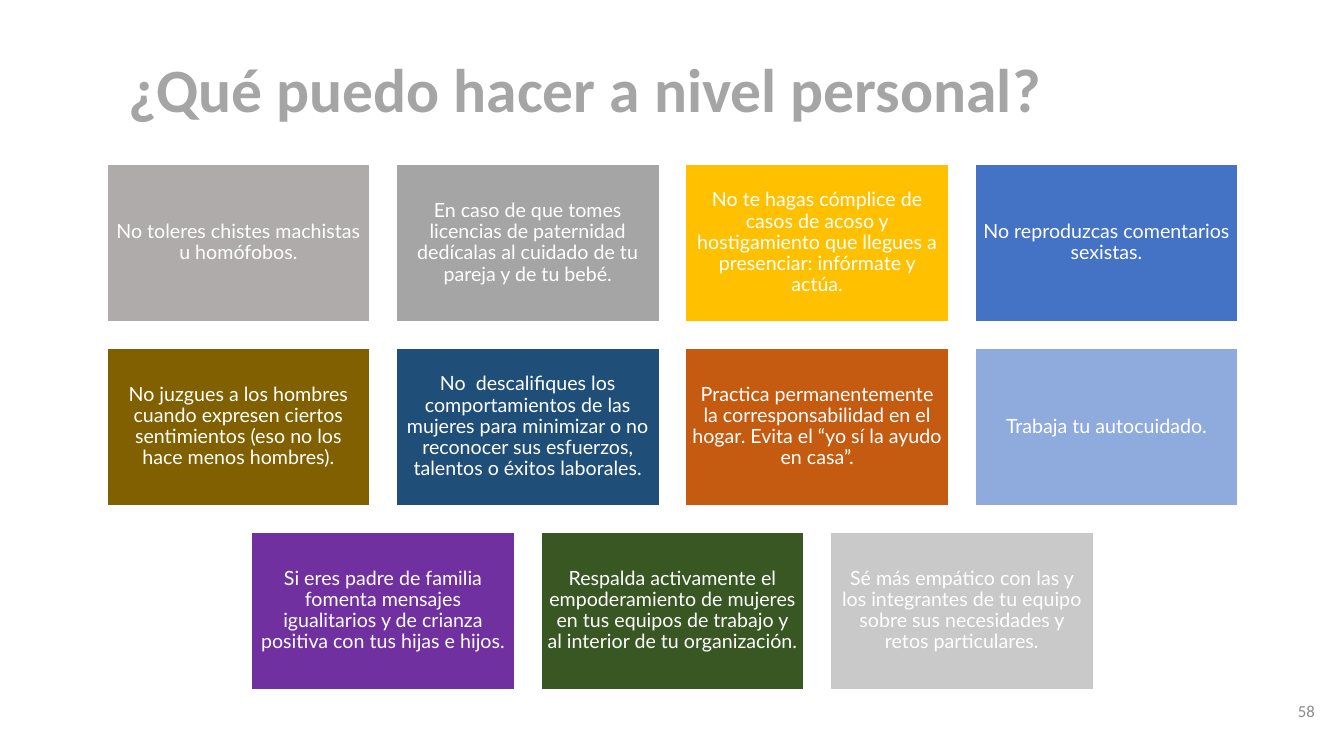
"""Build the slide of personal actions for gender equality."""
from dataclasses import dataclass

import pptx
import pptx.dml.color
import pptx.enum.shapes
import pptx.enum.text
import pptx.util

Inches = pptx.util.Inches
RGBColor = pptx.dml.color.RGBColor
PP_ALIGN = pptx.enum.text.PP_ALIGN
MSO_ANCHOR = pptx.enum.text.MSO_ANCHOR

WHITE = RGBColor(0xFF, 0xFF, 0xFF)
WARM_GRAY = RGBColor(0xAF, 0xAB, 0xAB)
GRAY = RGBColor(0xA5, 0xA5, 0xA5)
LIGHT_GRAY = RGBColor(0xC9, 0xC9, 0xC9)
NUMBER_GRAY = RGBColor(0x8C, 0x8C, 0x8C)
GOLD = RGBColor(0xFF, 0xC0, 0x00)
BLUE = RGBColor(0x44, 0x72, 0xC4)
BROWN = RGBColor(0x80, 0x60, 0x00)
NAVY = RGBColor(0x1F, 0x4E, 0x79)
ORANGE = RGBColor(0xC5, 0x5A, 0x11)
LIGHT_BLUE = RGBColor(0x8F, 0xAA, 0xDC)
PURPLE = RGBColor(0x70, 0x30, 0xA0)
GREEN = RGBColor(0x38, 0x57, 0x23)

SLIDE_W, SLIDE_H = 13.33, 7.5
CARD_W, CARD_H = 2.61, 1.56
STEP_X, STEP_Y = 2.87, 1.825
GRID_CENTER, GRID_TOP = 6.67, 1.63


@dataclass(frozen=True)
class Card:
    """One coloured piece of advice."""
    text: str
    fill: RGBColor


ROWS: list[list[Card]] = [
    [
        Card("No toleres chistes machistas u homófobos.", WARM_GRAY),
        Card("En caso de que tomes licencias de paternidad dedícalas al cuidado "
             "de tu pareja y de tu bebé.", GRAY),
        Card("No te hagas cómplice de casos de acoso y hostigamiento que llegues "
             "a presenciar: infórmate y actúa.", GOLD),
        Card("No reproduzcas comentarios sexistas.", BLUE),
    ],
    [
        Card("No juzgues a los hombres cuando expresen ciertos sentimientos "
             "(eso no los hace menos hombres).", BROWN),
        Card("No  descalifiques los comportamientos de las mujeres para minimizar "
             "o no reconocer sus esfuerzos, talentos o éxitos laborales.", NAVY),
        Card("Practica permanentemente la corresponsabilidad en el hogar. "
             "Evita el “yo sí la ayudo en casa”.", ORANGE),
        Card("Trabaja tu autocuidado.", LIGHT_BLUE),
    ],
    [
        Card("Si eres padre de familia fomenta mensajes igualitarios y de crianza "
             "positiva con tus hijas e hijos.", PURPLE),
        Card("Respalda activamente el empoderamiento de mujeres en tus equipos de "
             "trabajo y al interior de tu organización.", GREEN),
        Card("Sé más empático con las y los integrantes de tu equipo sobre sus "
             "necesidades y retos particulares.", LIGHT_GRAY),
    ],
]


def write(sp, text: str, *, size: float, color: RGBColor, font: str = "Calibri",
          bold: bool = False, align=PP_ALIGN.LEFT, anchor=MSO_ANCHOR.TOP,
          inset: float = 0.13, spacing: float = 1.0) -> None:
    """Fill a shape with one formatted paragraph."""
    tf = sp.text_frame
    tf.word_wrap = True
    tf.vertical_anchor = anchor
    tf.margin_left = tf.margin_right = Inches(inset)
    tf.margin_top = tf.margin_bottom = Inches(inset)
    p = tf.paragraphs[0]
    p.alignment = align
    p.line_spacing = spacing
    r = p.add_run()
    r.text = text
    r.font.name = font
    r.font.size = pptx.util.Pt(size)
    r.font.bold = bold
    r.font.color.rgb = color


def add_card(s, card: Card, x: float, y: float) -> None:
    """Draw one card with its top left corner at x, y."""
    sp = s.shapes.add_shape(pptx.enum.shapes.MSO_SHAPE.RECTANGLE,
                            Inches(x), Inches(y), Inches(CARD_W), Inches(CARD_H))
    sp.shadow.inherit = False
    sp.fill.solid()
    sp.fill.fore_color.rgb = card.fill
    sp.line.color.rgb = WHITE
    sp.line.width = pptx.util.Pt(1)
    write(sp, card.text, size=14, color=WHITE, font="Lato", align=PP_ALIGN.CENTER,
          anchor=MSO_ANCHOR.MIDDLE, inset=0.06, spacing=0.9)


def main() -> None:
    """Build and save the presentation."""
    prs = pptx.Presentation()
    prs.slide_width, prs.slide_height = Inches(SLIDE_W), Inches(SLIDE_H)
    s = prs.slides.add_slide(prs.slide_layouts[6])

    title = s.shapes.add_textbox(Inches(1.14), Inches(0.13), Inches(11.23), Inches(1.25))
    write(title, "¿Qué puedo hacer a nivel personal?", size=44, color=GRAY, bold=True,
          anchor=MSO_ANCHOR.BOTTOM, spacing=0.9)

    for i, row in enumerate(ROWS):
        left = GRID_CENTER - ((len(row) - 1) * STEP_X + CARD_W) / 2
        for j, card in enumerate(row):
            add_card(s, card, left + j * STEP_X, GRID_TOP + i * STEP_Y)

    number = s.shapes.add_textbox(Inches(12.37), Inches(6.85), Inches(0.8), Inches(0.46))
    write(number, "58", size=12, color=NUMBER_GRAY, align=PP_ALIGN.RIGHT)

    prs.save("out.pptx")


if __name__ == "__main__":
    main()
